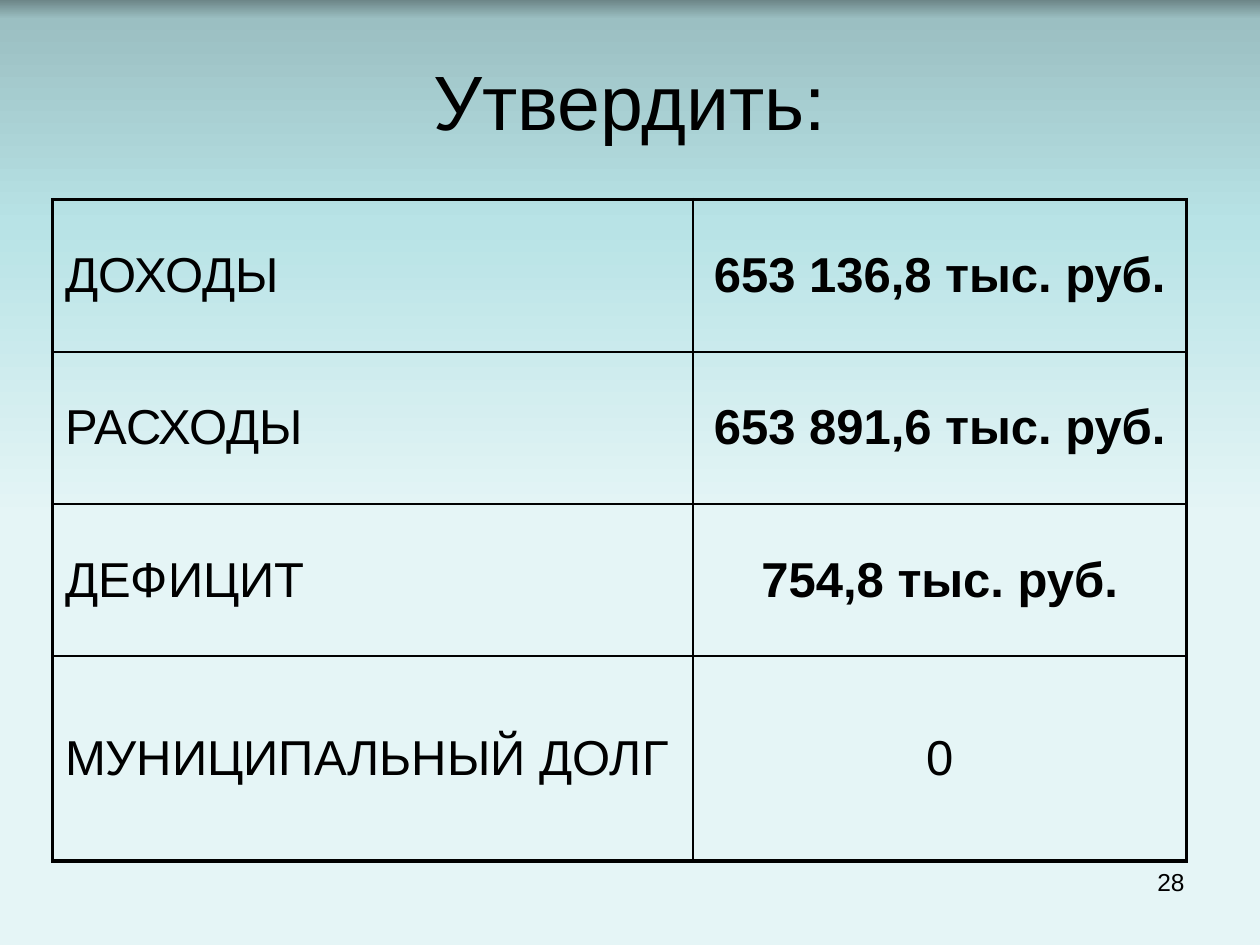
from dataclasses import dataclass

from lxml.etree import SubElement
from pptx import Presentation
from pptx.dml.color import RGBColor
from pptx.enum.text import MSO_ANCHOR, PP_ALIGN
from pptx.oxml.ns import qn
from pptx.slide import Slide
from pptx.table import Table, _Cell
from pptx.text.text import TextFrame
from pptx.util import Pt


@dataclass(frozen=True)
class Theme:
    font: str = "Arial"
    ink: str = "000000"
    title: int = 44
    body: int = 28
    number: int = 14
    outer: float = 2.25
    inner: float = 1
    gradient: tuple = ((0, "6D8688"), (2, "9BBFC2"), (24, "B8E3E6"), (55, "E5F5F6"))


@dataclass(frozen=True)
class BudgetRow:
    label: str
    value: str
    height: float = 87
    bold: bool = True


THEME = Theme()
COLUMNS = (366, 282)
ROWS = (
    BudgetRow("ДОХОДЫ", "653 136,8 тыс. руб."),
    BudgetRow("РАСХОДЫ", "653 891,6 тыс. руб."),
    BudgetRow("ДЕФИЦИТ", "754,8 тыс. руб."),
    BudgetRow("МУНИЦИПАЛЬНЫЙ ДОЛГ", "0", height=117, bold=False),
)


def write(tf: TextFrame, text: str, *, size: float, align=PP_ALIGN.LEFT, bold: bool = False) -> None:
    p = tf.paragraphs[0]
    p.alignment = align
    r = p.add_run()
    r.text = text
    r.font.name = THEME.font
    r.font.size = Pt(size)
    r.font.bold = bold
    r.font.color.rgb = RGBColor.from_string(THEME.ink)


def add_text(s: Slide, text: str, box: tuple, *, anchor=MSO_ANCHOR.TOP, **fmt) -> None:
    tf = s.shapes.add_textbox(*map(Pt, box)).text_frame
    tf.word_wrap = True
    tf.vertical_anchor = anchor
    write(tf, text, **fmt)


def paint_background(s: Slide) -> None:
    fill = s.background.fill
    fill.gradient()
    fill.gradient_angle = 270
    stops = next(s.element.iter(qn("a:gsLst")))
    for stop in list(stops):
        stops.remove(stop)
    for position, color in THEME.gradient:
        stop = SubElement(stops, qn("a:gs"), pos=str(position * 1000))
        SubElement(stop, qn("a:srgbClr"), val=color)


def set_borders(cell: _Cell, outer: dict[str, bool]) -> None:
    tcPr = cell._tc.get_or_add_tcPr()
    for i, (side, is_outer) in enumerate(outer.items()):
        width = Pt(THEME.outer if is_outer else THEME.inner)
        ln = SubElement(tcPr, qn(f"a:ln{side}"), w=str(width))
        fill = SubElement(ln, qn("a:solidFill"))
        SubElement(fill, qn("a:srgbClr"), val=THEME.ink)
        tcPr.insert(i, ln)


def add_budget_table(s: Slide, left: float, top: float) -> Table:
    height = sum(row.height for row in ROWS)
    frame = s.shapes.add_table(
        len(ROWS), len(COLUMNS), Pt(left), Pt(top), Pt(sum(COLUMNS)), Pt(height)
    )
    table = frame.table
    table.first_row = table.horz_banding = False
    for column, width in zip(table.columns, COLUMNS):
        column.width = Pt(width)
    for i, row in enumerate(ROWS):
        table.rows[i].height = Pt(row.height)
        label, value = table.cell(i, 0), table.cell(i, 1)
        write(label.text_frame, row.label, size=THEME.body)
        write(value.text_frame, row.value, size=THEME.body, align=PP_ALIGN.CENTER, bold=row.bold)
        for j, cell in enumerate((label, value)):
            cell.vertical_anchor = MSO_ANCHOR.MIDDLE
            cell.fill.background()
            set_borders(cell, {
                "L": j == 0,
                "R": j == len(COLUMNS) - 1,
                "T": i == 0,
                "B": i == len(ROWS) - 1,
            })
    return table


def main() -> None:
    prs = Presentation()
    prs.slide_width, prs.slide_height = Pt(720), Pt(540)
    s = prs.slides.add_slide(prs.slide_layouts[6])
    paint_background(s)
    add_text(s, "28", (516, 492, 168, 37.5), size=THEME.number, align=PP_ALIGN.RIGHT)
    add_text(s, "Утвердить:", (36, 24, 648, 66), size=THEME.title,
             align=PP_ALIGN.CENTER, anchor=MSO_ANCHOR.MIDDLE)
    add_budget_table(s, 30, 114)
    prs.save("out.pptx")


if __name__ == "__main__":
    main()
